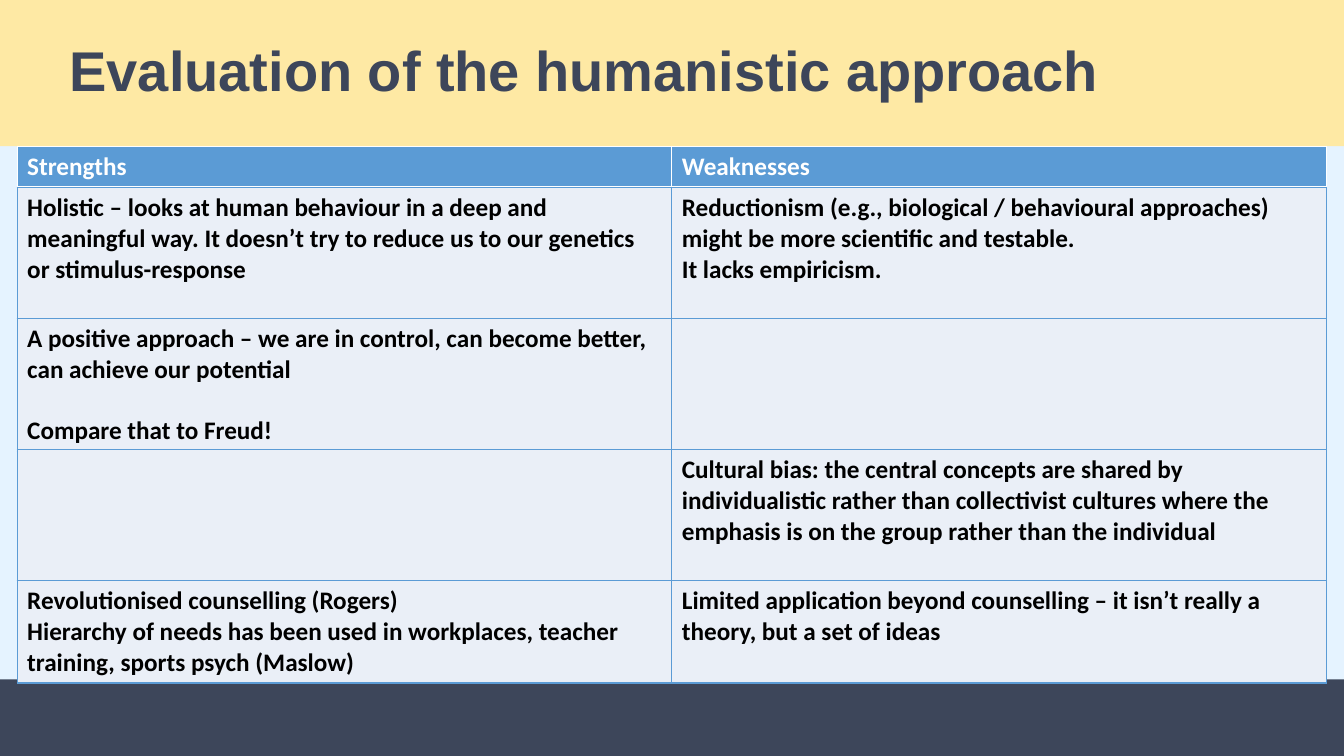
from lxml import etree
from pptx import Presentation
from pptx.dml.color import RGBColor
from pptx.enum.shapes import MSO_SHAPE
from pptx.enum.text import MSO_ANCHOR, PP_ALIGN
from pptx.oxml.ns import qn
from pptx.util import Pt

RECTANGLE = MSO_SHAPE.RECTANGLE
MIDDLE = MSO_ANCHOR.MIDDLE
LEFT = PP_ALIGN.LEFT

SKY = RGBColor(0xE5, 0xF3, 0xFF)
SLATE = RGBColor(0x3D, 0x46, 0x5A)
CREAM = RGBColor(0xFE, 0xE9, 0xA4)
BLUE = RGBColor(0x5B, 0x9B, 0xD5)
PALE = RGBColor(0xEA, 0xEF, 0xF7)
WHITE = RGBColor(0xFF, 0xFF, 0xFF)
BLACK = RGBColor(0, 0, 0)

SLIDE_WIDTH, SLIDE_HEIGHT = 960, 540
TITLE_HEIGHT = 104.4
FOOTER_TOP = 485.28
TABLE_LEFT = 12.24
COLUMN_WIDTH = 467.64
HEADER_HEIGHT = 29.5
BLANK_LINE = 21.6

HEADINGS = [["Strengths"], ["Weaknesses"]]
POINTS = [
    (93.6, [
        ["Holistic – looks at human behaviour in a deep and meaningful way. "
         "It doesn’t try to reduce us to our genetics or stimulus-response"],
        ["Reductionism (e.g., biological / behavioural approaches) might be "
         "more scientific and testable.", "It lacks empiricism."],
    ], 0),
    (93.6, [
        ["A positive approach – we are in control, can become better, "
         "can achieve our potential", "Compare that to Freud!"],
        [],
    ], BLANK_LINE),
    (93.6, [
        [],
        ["Cultural bias: the central concepts are shared by individualistic "
         "rather than collectivist cultures where the emphasis is on the "
         "group rather than the individual"],
    ], 0),
    (72, [
        ["Revolutionised counselling (Rogers)",
         "Hierarchy of needs has been used in workplaces, teacher training, "
         "sports psych (Maslow)"],
        ["Limited application beyond counselling – it isn’t really a theory, "
         "but a set of ideas"],
    ], 0),
]


class EvaluationSlide:
    title_font = "Arial"
    body_font = "Calibri"

    def __init__(self, page):
        self.page = page
        page.background.fill.solid()
        page.background.fill.fore_color.rgb = SKY

    def style(self, font, name, size, color):
        font.name = name
        font.size = Pt(size)
        font.bold = True
        font.color.rgb = color

    def band(self, top, height, color):
        box = self.page.shapes.add_shape(
            RECTANGLE, 0, Pt(top), Pt(SLIDE_WIDTH), Pt(height))
        box.shadow.inherit = False
        box.fill.solid()
        box.fill.fore_color.rgb = color
        box.line.fill.background()
        return box

    def title(self, text):
        frame = self.band(0, TITLE_HEIGHT, CREAM).text_frame
        frame.text = text
        frame.word_wrap = True
        frame.vertical_anchor = MIDDLE
        frame.margin_left = Pt(49.7)
        para = frame.paragraphs[0]
        para.alignment = LEFT
        para.line_spacing = 0.9
        self.style(para.runs[0].font, self.title_font, 40, SLATE)

    def borders(self, cell, color, bottom):
        properties = cell._tc.get_or_add_tcPr()
        for side, width in (("L", 1), ("R", 1), ("T", 1), ("B", bottom)):
            line = etree.SubElement(
                properties, qn(f"a:ln{side}"), w=str(Pt(width)))
            fill = etree.SubElement(line, qn("a:solidFill"))
            etree.SubElement(fill, qn("a:srgbClr"), val=str(color))

    def row(self, top, height, contents, fill, ink, edge, bottom=1, gap=0):
        table = self.page.shapes.add_table(
            1, len(contents), Pt(TABLE_LEFT), Pt(top),
            Pt(COLUMN_WIDTH * len(contents)), Pt(height)).table
        table.first_row = False
        table.horz_banding = False
        for cell, lines in zip(table.rows[0].cells, contents):
            self.borders(cell, edge, bottom)
            cell.fill.solid()
            cell.fill.fore_color.rgb = fill
            cell.text_frame.text = "\n".join(lines)
            for index, para in enumerate(cell.text_frame.paragraphs):
                if index and gap:
                    para.space_before = Pt(gap)
                for span in para.runs:
                    self.style(span.font, self.body_font, 18, ink)


def main():
    deck = Presentation()
    deck.slide_width = Pt(SLIDE_WIDTH)
    deck.slide_height = Pt(SLIDE_HEIGHT)
    slide = EvaluationSlide(deck.slides.add_slide(deck.slide_layouts[6]))

    slide.band(FOOTER_TOP, SLIDE_HEIGHT - FOOTER_TOP, SLATE)
    slide.title("Evaluation of the humanistic approach")
    slide.row(TITLE_HEIGHT, HEADER_HEIGHT, HEADINGS, BLUE, WHITE, WHITE, bottom=3)
    top = TITLE_HEIGHT + HEADER_HEIGHT
    for height, contents, gap in POINTS:
        slide.row(top, height, contents, PALE, BLACK, BLUE, gap=gap)
        top += height

    deck.save("out.pptx")


if __name__ == "__main__":
    main()
